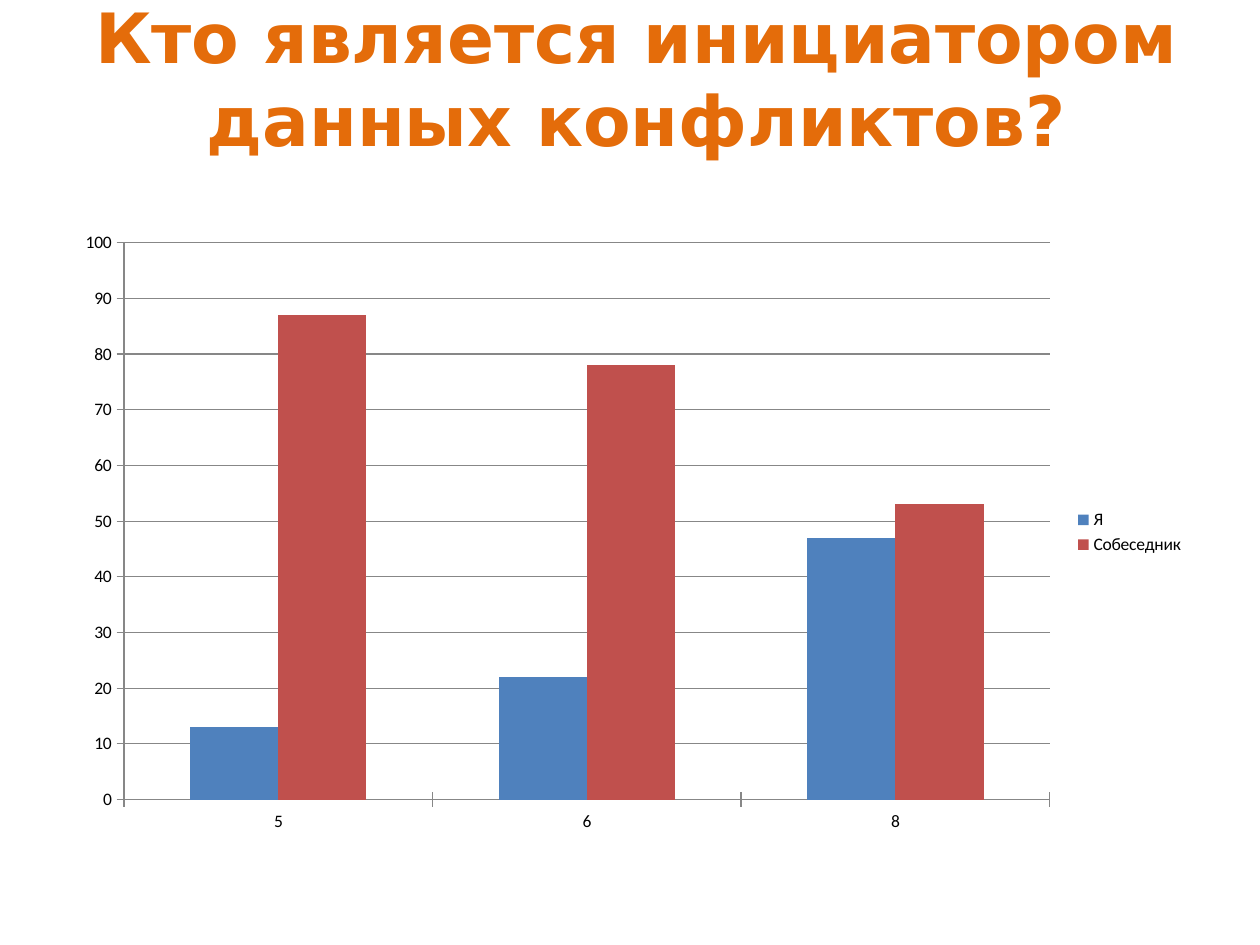
from pptx import Presentation
from pptx.chart.data import CategoryChartData
from pptx.dml.color import RGBColor
from pptx.enum.chart import XL_CHART_TYPE, XL_LEGEND_POSITION, XL_TICK_MARK
from pptx.enum.text import MSO_ANCHOR, PP_ALIGN
from pptx.util import Inches, Pt

GRADES = ["5", "6", "8"]
SERIES = [
    ("Я", [13, 22, 47], "4F81BD"),
    ("Собеседник", [87, 78, 53], "C0504D"),
]


def paint(target, color):
    """Give a fill a solid colour from a hex string."""
    target.solid()
    target.fore_color.rgb = RGBColor.from_string(color)


def style(font, name, size, color, bold=False):
    """Set the face, size, colour and weight of a font."""
    font.name, font.size, font.bold = name, Pt(size), bold
    paint(font.fill, color)


def add_text(slide, text, box, name="Calibri", size=18, color="000000",
             bold=False, align=PP_ALIGN.CENTER, bottom=0.05):
    """Add a wrapped, vertically centred text box."""
    frame = slide.shapes.add_textbox(*map(Inches, box)).text_frame
    frame.word_wrap = True
    frame.vertical_anchor = MSO_ANCHOR.MIDDLE
    frame.margin_bottom = Inches(bottom)
    line = frame.paragraphs[0]
    line.alignment = align
    run = line.add_run()
    run.text = text
    style(run.font, name, size, color, bold)


def add_bars(slide, box):
    """Add the clustered column chart of answers by grade."""
    data = CategoryChartData()
    data.categories = GRADES
    for name, values, _ in SERIES:
        data.add_series(name, values)
    chart = slide.shapes.add_chart(
        XL_CHART_TYPE.COLUMN_CLUSTERED, *map(Inches, box), data).chart
    style(chart.font, "Calibri", 10, "000000")
    chart.has_title = False
    chart.has_legend = True
    chart.legend.position = XL_LEGEND_POSITION.RIGHT
    chart.legend.include_in_layout = False
    plot = chart.plots[0]
    plot.gap_width, plot.overlap, plot.vary_by_categories = 150, 0, False
    for bars, (_, _, color) in zip(plot.series, SERIES):
        paint(bars.format.fill, color)
    scale = chart.value_axis
    scale.minimum_scale, scale.maximum_scale, scale.major_unit = 0, 100, 10
    scale.has_major_gridlines = True
    for axis in (chart.category_axis, scale):
        axis.major_tick_mark = XL_TICK_MARK.CROSS
        paint(axis.format.line.fill, "878787")
    paint(scale.major_gridlines.format.line.fill, "878787")


def main():
    """Build the slide and save it."""
    deck = Presentation()
    deck.slide_width, deck.slide_height = Inches(10), Inches(7.5)
    slide = deck.slides.add_slide(deck.slide_layouts[6])
    add_text(slide, "Кто является инициатором данных конфликтов?",
             (0.55, 0.31, 9, 1.25), name="DejaVu Sans", size=39.6,
             color="E46C0A", bold=True, bottom=0.69)
    add_bars(slide, (0.5, 1.75, 9, 4.95))
    deck.save("out.pptx")


if __name__ == "__main__":
    main()
